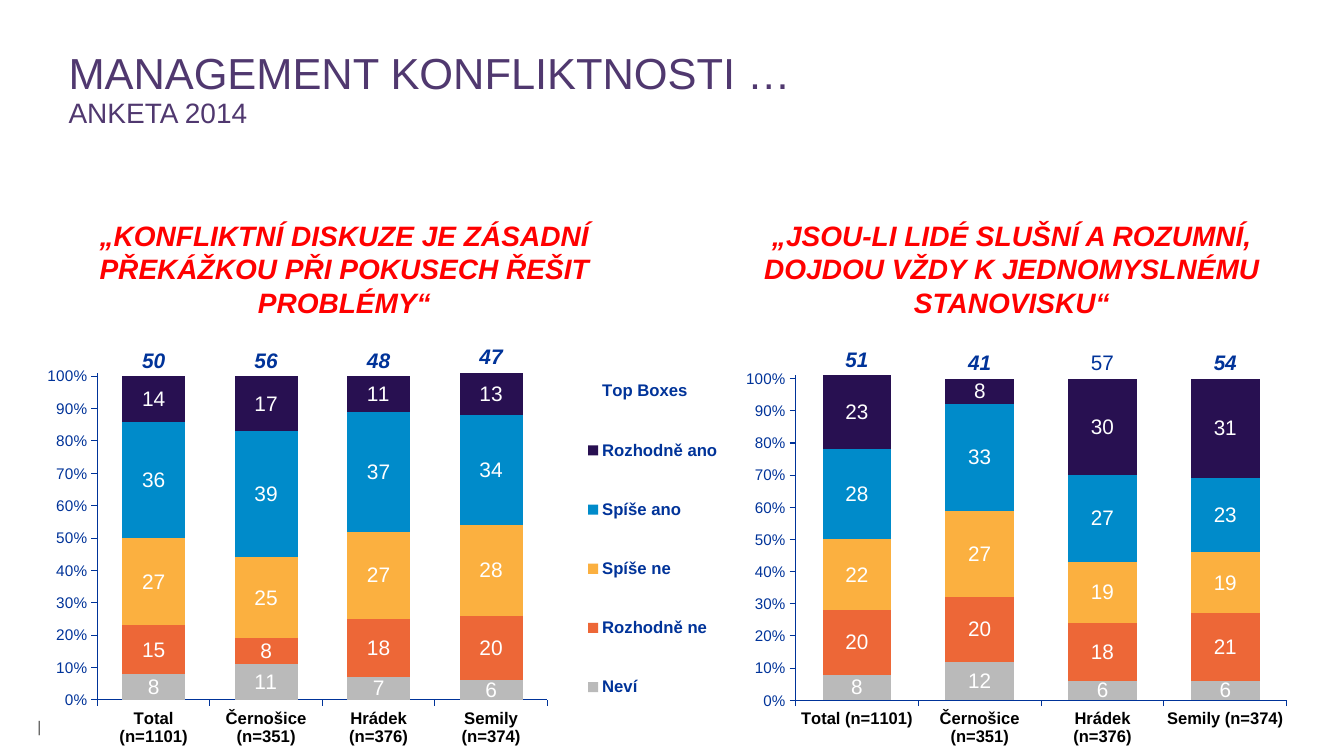
from lxml import etree
from pptx import Presentation
from pptx.chart import data as chart_data
from pptx.dml import color
from pptx.enum import chart as ch, text
from pptx.oxml import ns
from pptx.util import Inches, Pt

NAVY = "003399"


def style(font, size, hex_color, bold=False, italic=False):
    font.name, font.size, font.bold, font.italic = "Arial", Pt(size), bold, italic
    font.color.rgb = color.RGBColor.from_string(hex_color)


def manual_layout(x, y, w, h, inner=False):
    layout = etree.Element(ns.qn("c:layout"))
    manual = etree.SubElement(layout, ns.qn("c:manualLayout"))
    settings = [("layoutTarget", "inner")] if inner else []
    settings += [("xMode", "edge"), ("yMode", "edge"), ("x", x), ("y", y), ("w", w), ("h", h)]
    for tag, value in settings:
        etree.SubElement(manual, ns.qn("c:" + tag)).set("val", str(value))
    return layout


deck = Presentation()
deck.slide_width, deck.slide_height = Inches(13.33), Inches(7.5)
slide = deck.slides.add_slide(deck.slide_layouts[6])

# Text: footer mark, title, two statements
LEFT, CENTER = text.PP_ALIGN.LEFT, text.PP_ALIGN.CENTER
TOP, MIDDLE = text.MSO_ANCHOR.TOP, text.MSO_ANCHOR.MIDDLE
texts = [
    ((0.37, 7.11, 0.04, 0.19), 0, TOP, LEFT, False, [("|", 11)], "575756"),
    ((0.68, 0.52, 12, 1.25), 0, TOP, LEFT, False,
     [("MANAGEMENT KONFLIKTNOSTI …", 31), ("ANKETA 2014", 20)], "50386F"),
    ((0.47, 2.16, 5.89, 1.01), 0.1, MIDDLE, CENTER, True,
     [("„KONFLIKTNÍ DISKUZE JE ZÁSADNÍ PŘEKÁŽKOU PŘI POKUSECH ŘEŠIT PROBLÉMY“", 20)], "FF0000"),
    ((7.09, 2.16, 5.89, 1.01), 0.1, MIDDLE, CENTER, True,
     [("„JSOU-LI LIDÉ SLUŠNÍ A ROZUMNÍ, DOJDOU VŽDY K JEDNOMYSLNÉMU STANOVISKU“", 20)], "FF0000"),
]
for place, inset, anchor, align, emphasis, lines, hex_color in texts:
    frame = slide.shapes.add_textbox(*map(Inches, place)).text_frame
    frame.word_wrap = len(lines[0][0]) > 1
    frame.vertical_anchor = anchor
    frame.margin_left = frame.margin_right = Inches(inset)
    frame.margin_top = frame.margin_bottom = 0
    for i, (line, size) in enumerate(lines):
        paragraph = frame.add_paragraph() if i else frame.paragraphs[0]
        paragraph.text = line
        paragraph.alignment = align
        paragraph.line_spacing = 0.9 if len(lines) > 1 else 1.0
        style(paragraph.font, size, hex_color, emphasis, emphasis)

# Survey answers, from the bottom of the stack up
towns = ["Total (n=1101)", "Černošice (n=351)", "Hrádek (n=376)", "Semily (n=374)"]
answers = [
    ("Neví", "BABABA", (8, 11, 7, 6), (8, 12, 6, 6)),
    ("Rozhodně ne", "ED6737", (15, 8, 18, 20), (20, 20, 18, 21)),
    ("Spíše ne", "FBB040", (27, 25, 27, 28), (22, 27, 19, 19)),
    ("Spíše ano", "008BCA", (36, 39, 37, 34), (28, 33, 27, 23)),
    ("Rozhodně ano", "281051", (14, 17, 11, 13), (23, 8, 30, 31)),
    ("Top Boxes", None, (50, 56, 48, 47), (51, 41, 58, 54)),
]
charts = []
for side, (place, plot_width) in enumerate([((0.47, 2.95, 6.82, 4.55), 0.657),
                                            ((7.4, 2.98, 5.89, 4.52), 0.84)]):
    survey = chart_data.CategoryChartData()
    survey.categories = towns
    for name, _, *values in answers:
        survey.add_series(name, values[side])
    chart = slide.shapes.add_chart(
        ch.XL_CHART_TYPE.COLUMN_STACKED, *map(Inches, place), survey).chart
    charts.append(chart)
    style(chart.font, 18, "000000")
    chart.has_title = chart.has_legend = False
    plot = chart.plots[0]
    plot.gap_width, plot.overlap, plot.vary_by_categories = 79, 100, False

    # Plot area position
    plot_area = chart._chartSpace.chart.plotArea
    for old in plot_area.findall(ns.qn("c:layout")):
        plot_area.remove(old)
    plot_area.insert(0, manual_layout(0.069, 0.165, plot_width, 0.713, inner=True))

    # Axes
    percent = chart.value_axis
    percent.minimum_scale, percent.maximum_scale, percent.major_unit = 0, 101, 10
    percent.has_major_gridlines = False
    percent.tick_labels.number_format = '#,##0"%";\\-#,##0'
    percent.tick_labels.number_format_is_linked = False
    style(percent.tick_labels.font, 11, NAVY)
    style(chart.category_axis.tick_labels.font, 12, "000000", bold=True)
    for axis in (percent, chart.category_axis):
        axis.major_tick_mark = ch.XL_TICK_MARK.OUTSIDE
        axis.format.line.width = Pt(0.75)
        axis.format.line.color.rgb = color.RGBColor.from_string(NAVY)

    # Bar colours and value labels
    for series, (_, fill, *_) in zip(plot.series, answers):
        labels = series.data_labels
        labels.show_value = True
        labels.number_format, labels.number_format_is_linked = "#,##0", False
        if fill:
            series.format.fill.solid()
            series.format.fill.fore_color.rgb = color.RGBColor.from_string(fill)
            style(labels.font, 15, "FFFFFF")
        else:
            series.format.fill.background()
            labels.position = ch.XL_LABEL_POSITION.INSIDE_BASE
            style(labels.font, 15, NAVY, bold=True, italic=True)

# Legend shared by both charts
charts[0].has_legend = True
legend = charts[0].legend
legend.position = ch.XL_LEGEND_POSITION.RIGHT
legend.include_in_layout = False
style(legend.font, 12, NAVY, bold=True)
legend._element.find(ns.qn("c:legendPos")).addnext(manual_layout(0.775, 0.095, 0.21, 0.865))

# Rounded top-box label for Hrádek
hradek_label = charts[1].plots[0].series[5].points[2].data_label
hradek_label.position = ch.XL_LABEL_POSITION.INSIDE_BASE
rounded = hradek_label.text_frame.paragraphs[0].add_run()
rounded.text = "57"
style(rounded.font, 15, NAVY)

deck.save("out.pptx")
